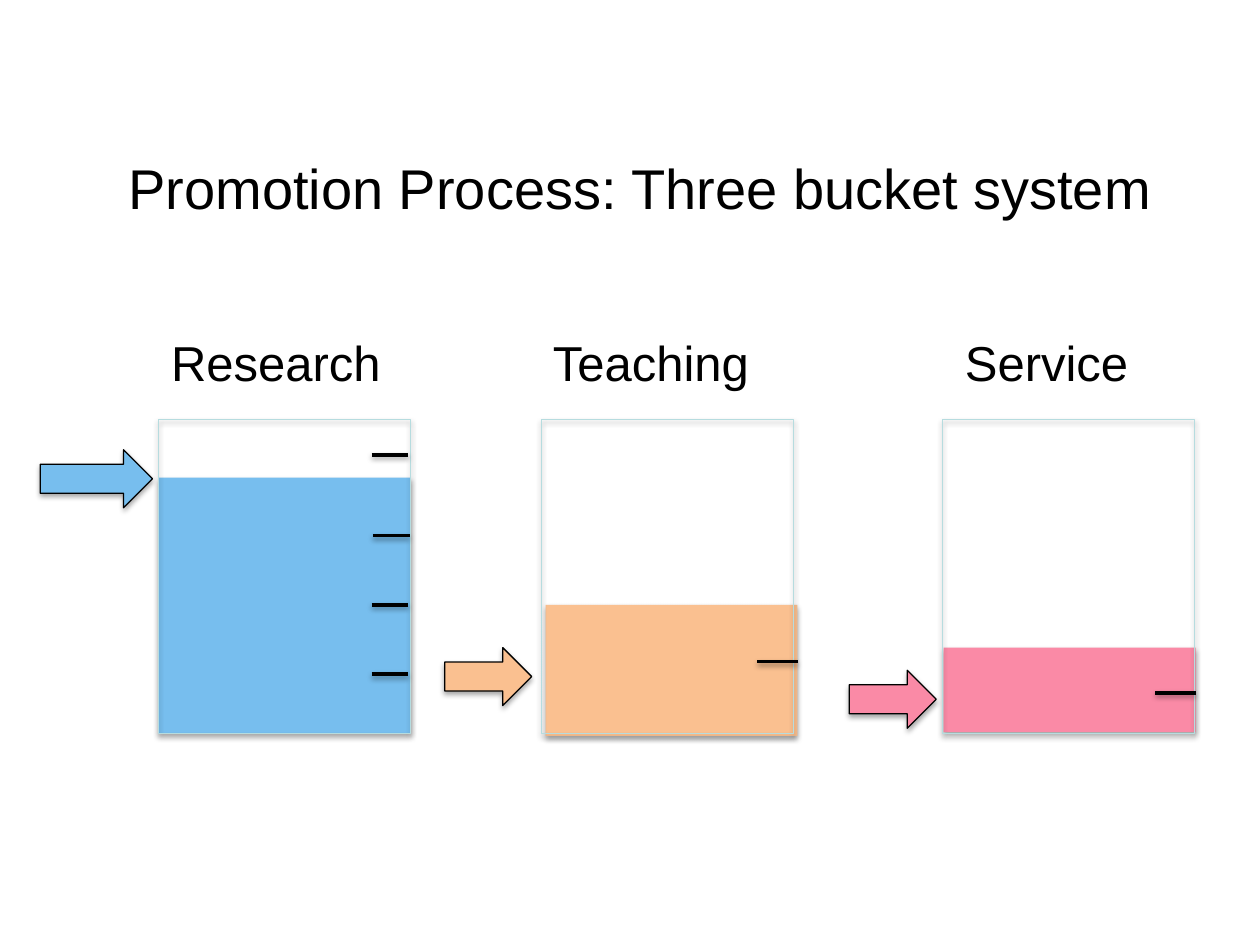
"""Build the three-bucket promotion process slide."""
from lxml import etree
from pptx import Presentation
from pptx.dml.color import RGBColor
from pptx.enum.shapes import MSO_CONNECTOR as Connector, MSO_SHAPE as Shape
from pptx.enum.text import MSO_AUTO_SIZE as AutoSize
from pptx.oxml.ns import qn
from pptx.util import Inches, Pt

COLORS = {"research": "77BEEE", "teaching": "FAC090", "service": "FA8AA6",
          "glass": "B6DCDF", "ink": "000000"}
TITLE = ("Promotion Process: Three bucket system", 0.92, 1.17, 8.4, 0.64, 32)
BUCKETS = [
    {"name": "Research", "color": "research", "left": 1.26, "label": (1.26, 1.88),
     "liquid": (1.26, 3.79, 2.03), "arrow": (0.32, 3.57, 0.89),
     "ticks": [(2.95, 5.35, 0.29), (2.95, 4.8, 0.29),
               (2.96, 4.25, 0.29), (2.95, 3.61, 0.29)]},
    {"name": "Teaching", "color": "teaching", "left": 4.3, "label": (4.29, 1.77),
     "liquid": (4.33, 4.8, 1.04), "arrow": (3.53, 5.14, 0.69),
     "ticks": [(6.01, 5.25, 0.32)]},
    {"name": "Service", "color": "service", "left": 7.48, "label": (7.56, 1.51),
     "liquid": (7.49, 5.14, 0.67), "arrow": (6.74, 5.32, 0.69),
     "ticks": [(9.17, 5.5, 0.32)]},
]
BUCKET_TOP, BUCKET_WIDTH, BUCKET_HEIGHT = 3.33, 2, 2.49
LABEL_TOP, LABEL_HEIGHT, ARROW_HEIGHT = 2.59, 0.57, 0.46


def rgb(name):
    return RGBColor.from_string(COLORS[name])


def add_shadow(item, distance=1.8, opacity=35):
    effects = etree.SubElement(item._element.spPr, qn("a:effectLst"))
    shadow = etree.SubElement(effects, qn("a:outerShdw"), blurRad=str(Pt(3.1)),
                              dist=str(Pt(distance)), dir="5400000", rotWithShape="0")
    color = etree.SubElement(shadow, qn("a:srgbClr"), val=COLORS["ink"])
    etree.SubElement(color, qn("a:alpha"), val=str(opacity * 1000))


def add_figure(slide, kind, left, top, width, height, fill=None, line=None):
    figure = slide.shapes.add_shape(kind, *map(Inches, (left, top, width, height)))
    if fill:
        figure.fill.solid()
        figure.fill.fore_color.rgb = rgb(fill)
    else:
        figure.fill.background()
    if line:
        figure.line.color.rgb = rgb(line)
        figure.line.width = Pt(0.75)
    else:
        figure.line.fill.background()
    add_shadow(figure)


def add_tick(slide, left, top, length):
    tick = slide.shapes.add_connector(
        Connector.STRAIGHT, *map(Inches, (left, top, left + length, top)))
    tick.line.color.rgb = rgb("ink")
    tick.line.width = Pt(2)
    add_shadow(tick, 1.6, 38)


def add_text(slide, text, left, top, width, height, size):
    box = slide.shapes.add_textbox(*map(Inches, (left, top, width, height)))
    frame = box.text_frame
    frame.word_wrap = False
    frame.auto_size = AutoSize.SHAPE_TO_FIT_TEXT
    para = frame.paragraphs[0]
    para.text = text
    para.font.name = "Arial"
    para.font.size = Pt(size)
    para.font.color.rgb = rgb("ink")


def main():
    deck = Presentation()
    deck.slide_width, deck.slide_height = Inches(10), Inches(7.5)
    slide = deck.slides.add_slide(deck.slide_layouts[6])
    for bucket in reversed(BUCKETS):
        left, top, height = bucket["liquid"]
        add_figure(slide, Shape.RECTANGLE, left, top, BUCKET_WIDTH, height,
                   fill=bucket["color"])
    for bucket in BUCKETS:
        add_figure(slide, Shape.RECTANGLE, bucket["left"], BUCKET_TOP,
                   BUCKET_WIDTH, BUCKET_HEIGHT, line="glass")
    for bucket in BUCKETS:
        for tick in bucket["ticks"]:
            add_tick(slide, *tick)
    add_text(slide, *TITLE)
    for bucket in BUCKETS:
        add_figure(slide, Shape.RIGHT_ARROW, *bucket["arrow"], ARROW_HEIGHT,
                   fill=bucket["color"], line="ink")
    for bucket in BUCKETS:
        left, width = bucket["label"]
        add_text(slide, bucket["name"], left, LABEL_TOP, width, LABEL_HEIGHT, 28)
    deck.save("out.pptx")


if __name__ == "__main__":
    main()
